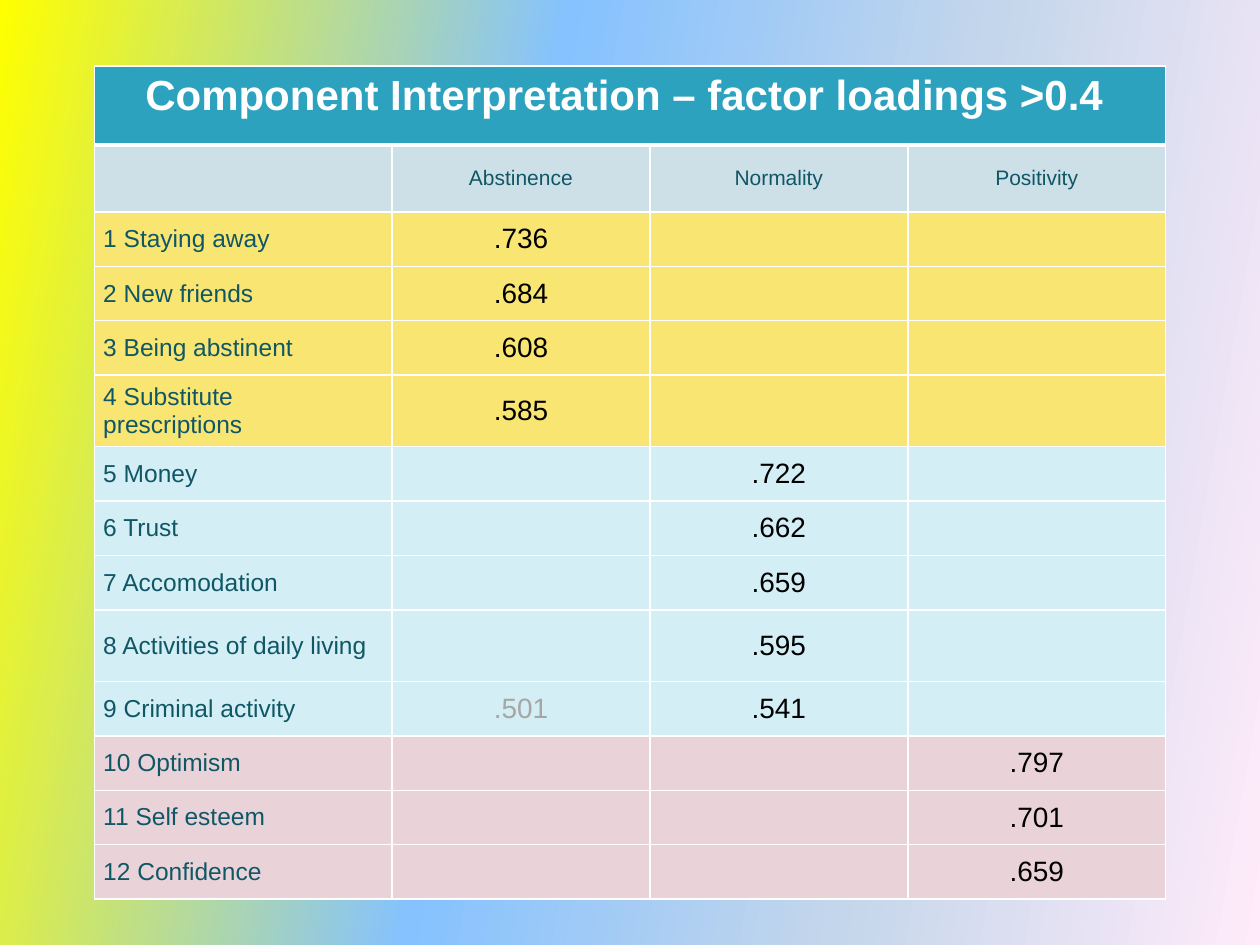
from dataclasses import dataclass

from lxml import etree
from pptx import Presentation
from pptx.dml.color import RGBColor
from pptx.enum import text
from pptx.oxml import ns
from pptx.util import Pt

WHITE = RGBColor(0xFF, 0xFF, 0xFF)
BLACK = RGBColor(0x00, 0x00, 0x00)
GREY = RGBColor(0xA6, 0xA6, 0xA6)
DARK_TEAL = RGBColor(0x10, 0x57, 0x66)
TEAL = RGBColor(0x2D, 0xA2, 0xBF)
PALE_BLUE = RGBColor(0xCD, 0xE0, 0xE8)
YELLOW = RGBColor(0xF9, 0xE5, 0x72)
AQUA = RGBColor(0xD3, 0xEE, 0xF5)
PINK = RGBColor(0xEA, 0xD3, 0xD8)
BACKGROUND = (
    (0, RGBColor(0xFF, 0xFF, 0x00)),
    (40, RGBColor(0x85, 0xC2, 0xFF)),
    (70, RGBColor(0xC4, 0xD6, 0xEB)),
    (100, RGBColor(0xFF, 0xEB, 0xFA)),
)

LEFT, TOP = 54, 37.6
COLUMN_WIDTHS = (170, 147.4, 147.4, 147.4)
TITLE_HEIGHT, HEADING_HEIGHT, ITEM_HEIGHT, TALL_HEIGHT = 45.2, 38.3, 31.1, 40.9
TITLE = "Component Interpretation – factor loadings >0.4 "
COMPONENTS = ("Abstinence", "Normality", "Positivity")


@dataclass
class Item:
    label: str
    loadings: tuple[str, str, str]
    fill: RGBColor
    height: float = ITEM_HEIGHT


@dataclass
class Style:
    size: float
    color: RGBColor
    bold: bool = False
    centered: bool = True


TITLE_STYLE = Style(24, WHITE, bold=True)
HEADING_STYLE = Style(12, DARK_TEAL)
LABEL_STYLE = Style(14, DARK_TEAL, centered=False)
MAIN_STYLE = Style(16, BLACK)
MINOR_STYLE = Style(16, GREY)

ITEMS = (
    Item("1 Staying away", (".736", "", ""), YELLOW),
    Item("2 New friends", (".684", "", ""), YELLOW),
    Item("3 Being abstinent", (".608", "", ""), YELLOW),
    Item("4 Substitute\vprescriptions", (".585", "", ""), YELLOW, TALL_HEIGHT),
    Item("5 Money", ("", ".722", ""), AQUA),
    Item("6 Trust", ("", ".662", ""), AQUA),
    Item("7 Accomodation", ("", ".659", ""), AQUA),
    Item("8 Activities of daily living", ("", ".595", ""), AQUA, TALL_HEIGHT),
    Item("9 Criminal activity", (".501", ".541", ""), AQUA),
    Item("10 Optimism", ("", "", ".797"), PINK),
    Item("11 Self esteem", ("", "", ".701"), PINK),
    Item("12 Confidence", ("", "", ".659"), PINK),
)


def paint_background(s) -> None:
    fill = s.background.fill
    fill.gradient()
    fill.gradient_angle = 350
    stops = s.background._cSld.find(".//" + ns.qn("a:gsLst"))
    for stop in list(stops):
        stops.remove(stop)
    for position, color in BACKGROUND:
        stop = etree.SubElement(stops, ns.qn("a:gs"), pos=str(position * 1000))
        etree.SubElement(stop, ns.qn("a:srgbClr"), val=str(color))


def set_borders(cell, top: float = 1, bottom: float = 1) -> None:
    tc_pr = cell._tc.get_or_add_tcPr()
    for side, width in (("L", 1), ("R", 1), ("T", top), ("B", bottom)):
        line = etree.SubElement(tc_pr, ns.qn("a:ln" + side), w=str(Pt(width)))
        solid = etree.SubElement(line, ns.qn("a:solidFill"))
        etree.SubElement(solid, ns.qn("a:srgbClr"), val=str(WHITE))


def paint_cell(cell, fill: RGBColor) -> None:
    cell.fill.solid()
    cell.fill.fore_color.rgb = fill


def write_cell(cell, words: str, style: Style) -> None:
    cell.text_frame.text = words
    p = cell.text_frame.paragraphs[0]
    p.alignment = text.PP_ALIGN.CENTER if style.centered else text.PP_ALIGN.LEFT
    for r in p.runs:
        r.font.name = "Arial"
        r.font.size = Pt(style.size)
        r.font.bold = style.bold
        r.font.color.rgb = style.color


def center_cell(cell) -> None:
    cell.vertical_anchor = text.MSO_ANCHOR.MIDDLE
    cell.margin_left = cell.margin_right = Pt(5)
    cell.margin_top = cell.margin_bottom = 0


def fill_row(table, row: int, words: tuple, styles: tuple, fill: RGBColor) -> None:
    for column, (word, style) in enumerate(zip(words, styles)):
        cell = table.cell(row, column)
        set_borders(cell, top=3 if row == 1 else 1)
        paint_cell(cell, fill)
        center_cell(cell)
        if word:
            write_cell(cell, word, style)


def loading_styles(loadings: tuple) -> tuple:
    strongest = max(loadings)
    return tuple(MAIN_STYLE if v == strongest else MINOR_STYLE for v in loadings)


def add_loadings_table(s) -> None:
    heights = (TITLE_HEIGHT, HEADING_HEIGHT, *(item.height for item in ITEMS))
    frame = s.shapes.add_table(
        len(heights), len(COLUMN_WIDTHS), Pt(LEFT), Pt(TOP),
        Pt(sum(COLUMN_WIDTHS)), Pt(sum(heights)),
    )
    table = frame.table
    for column, width in zip(table.columns, COLUMN_WIDTHS):
        column.width = Pt(width)
    for row, height in zip(table.rows, heights):
        row.height = Pt(height)

    for column in range(len(COLUMN_WIDTHS)):
        cell = table.cell(0, column)
        set_borders(cell, bottom=3)
        paint_cell(cell, TEAL)
    table.cell(0, 0).merge(table.cell(0, len(COLUMN_WIDTHS) - 1))
    write_cell(table.cell(0, 0), TITLE, TITLE_STYLE)

    fill_row(table, 1, ("", *COMPONENTS), (HEADING_STYLE,) * 4, PALE_BLUE)
    for row, item in enumerate(ITEMS, start=2):
        styles = (LABEL_STYLE, *loading_styles(item.loadings))
        fill_row(table, row, (item.label, *item.loadings), styles, item.fill)


def main() -> None:
    prs = Presentation()
    prs.slide_width, prs.slide_height = Pt(720), Pt(540)
    s = prs.slides.add_slide(prs.slide_layouts[6])
    paint_background(s)
    add_loadings_table(s)
    prs.save("out.pptx")


if __name__ == "__main__":
    main()
